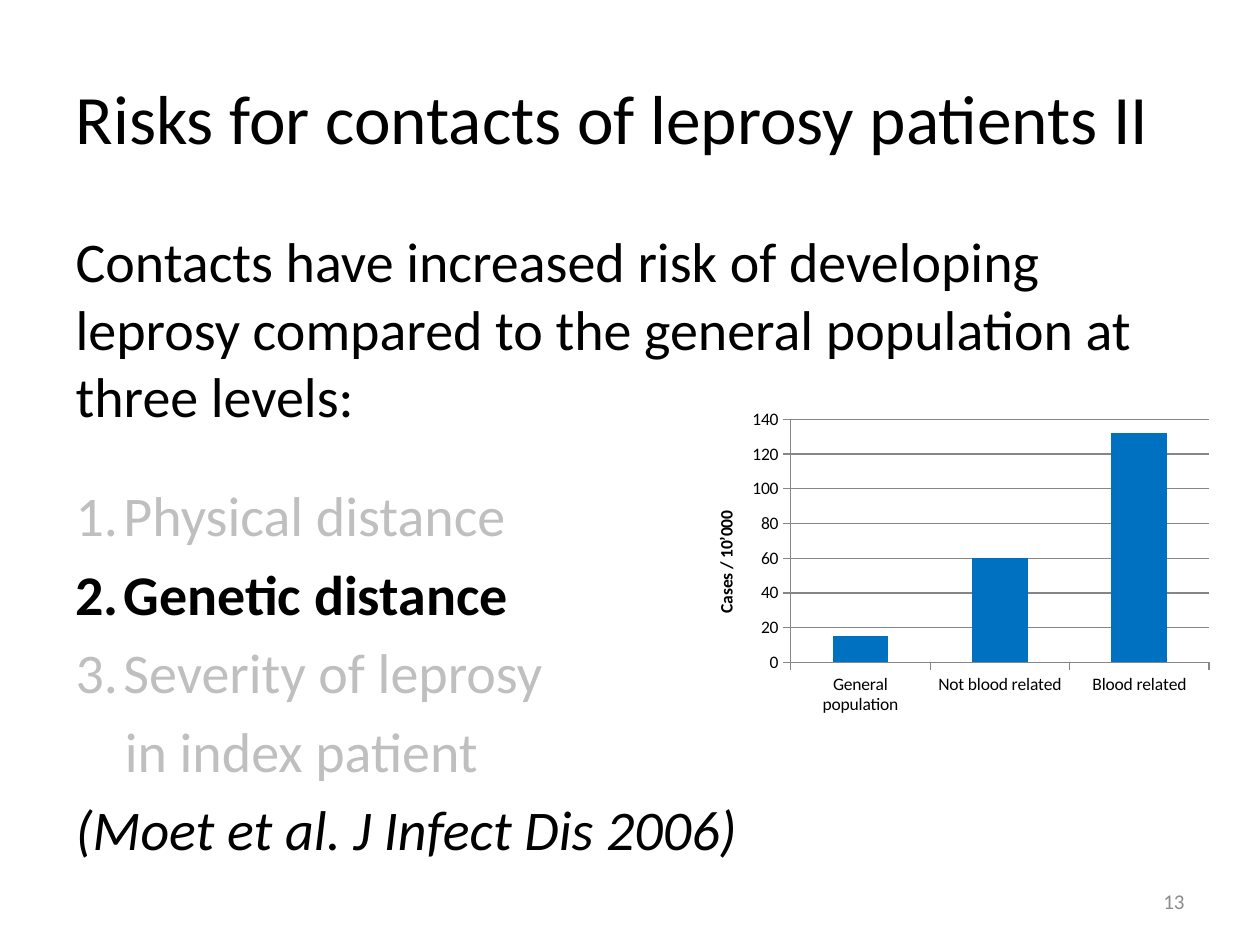
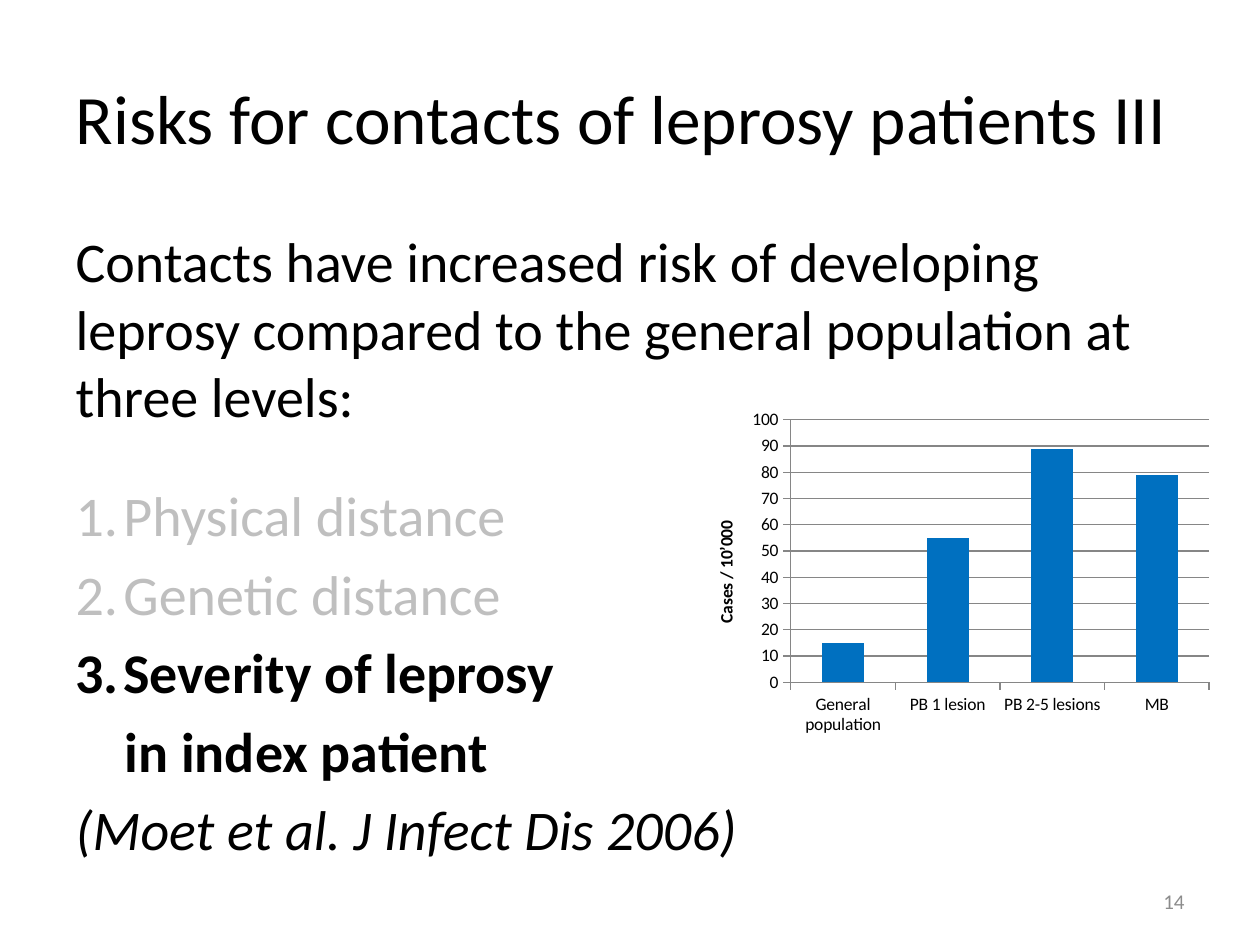
from lxml.etree import SubElement
from pptx import Presentation
from pptx.chart.data import CategoryChartData
from pptx.dml.color import RGBColor
from pptx.enum.chart import XL_CHART_TYPE, XL_TICK_MARK
from pptx.enum.text import MSO_ANCHOR, MSO_AUTO_SIZE, PP_ALIGN
from pptx.oxml.ns import qn
from pptx.util import Inches, Pt

FONT = "Calibri"
BLACK, MUTED, FOOTER, BAR, GRID = "000000", "BFBFBF", "8C8C8C", "0070C0", "868686"
BODY_SIZE, SPACE, LIST_GAP = 32, 6.4, 23.5
HANG, CONTINUED = 0.38, 0.39

INTRO = ("Contacts have increased risk of developing leprosy compared to "
         "the general population at three levels:")
LEVELS = [["Physical distance"], ["Genetic distance"],
          ["Severity of leprosy", "in index patient"]]
CITATION = "(Moet et al. J Infect Dis 2006)"
AXIS_TITLE = "Cases / 10’000"

SLIDES = [
    {"title": "Risks for contacts of leprosy patients II", "number": 13,
     "level": 1, "chart_height": 2.52,
     "cases": {"General population": 15, "Not blood related": 60,
               "Blood related": 132}},
    {"title": "Risks for contacts of leprosy patients III", "number": 14,
     "level": 2, "chart_height": 2.68,
     "cases": {"General population": 15, "PB 1 lesion": 55,
               "PB 2-5 lesions": 89, "MB": 79}},
]


def rgb(color):
    return RGBColor.from_string(color)


def set_font(font, size, color=BLACK, bold=False, italic=False):
    font.name, font.size = FONT, Pt(size)
    font.bold, font.italic = bold, italic
    font.color.rgb = rgb(color)


def place(shape, left, top, width, height):
    shape.left, shape.top = Inches(left), Inches(top)
    shape.width, shape.height = Inches(width), Inches(height)


def write(tf, text, size=BODY_SIZE, align=PP_ALIGN.LEFT, before=0,
          left=0, indent=0, numbered=False, **style):
    p = tf.paragraphs[0]
    if p.runs:
        p = tf.add_paragraph()
    p.alignment, p.space_before = align, Pt(before)
    r = p.add_run()
    r.text = text
    set_font(r.font, size, **style)
    pPr = p._p.get_or_add_pPr()
    pPr.set("marL", str(Inches(left)))
    pPr.set("indent", str(Inches(indent)))
    if numbered:
        SubElement(pPr, qn("a:buFont"), typeface="+mj-lt")
        SubElement(pPr, qn("a:buAutoNum"), type="arabicPeriod")
    else:
        SubElement(pPr, qn("a:buNone"))


def add_title(s, text):
    title = s.shapes.title
    place(title, 0.5, 0.3, 9, 1.25)
    tf = title.text_frame
    tf.auto_size, tf.vertical_anchor = MSO_AUTO_SIZE.NONE, MSO_ANCHOR.MIDDLE
    write(tf, text, size=39.6)


def add_levels(s, current):
    body = s.placeholders[1]
    place(body, 0.5, 1.75, 9, 4.95)
    tf = body.text_frame
    tf.auto_size = MSO_AUTO_SIZE.NONE
    write(tf, INTRO, before=SPACE)
    for i, (name, *more) in enumerate(LEVELS):
        style = {"color": BLACK if i == current else MUTED, "bold": i == current}
        write(tf, name, before=SPACE if i else LIST_GAP + SPACE,
              left=HANG, indent=-HANG, numbered=True, **style)
        for line in more:
            write(tf, line, before=SPACE, indent=CONTINUED, **style)
    write(tf, CITATION, before=SPACE, italic=True)


def add_number(s, number):
    box = s.shapes.add_textbox(Inches(7.17), Inches(6.95), Inches(2.33), Inches(0.4))
    tf = box.text_frame
    tf.word_wrap, tf.vertical_anchor = True, MSO_ANCHOR.MIDDLE
    write(tf, str(number), size=12, align=PP_ALIGN.RIGHT, color=FOOTER)


def add_cases_chart(s, cases, height):
    data = CategoryChartData()
    data.categories = list(cases)
    data.add_series("Series 1", list(cases.values()))
    chart = s.shapes.add_chart(XL_CHART_TYPE.COLUMN_CLUSTERED, Inches(5.47),
                               Inches(3.2), Inches(4.21), Inches(height), data).chart
    set_font(chart.font, 10)
    chart.has_legend = chart.has_title = False
    plot = chart.plots[0]
    plot.gap_width, plot.vary_by_categories = 150, False
    fill = plot.series[0].format.fill
    fill.solid()
    fill.fore_color.rgb = rgb(BAR)
    value_axis = chart.value_axis
    value_axis.has_major_gridlines = True
    for axis in (chart.category_axis, value_axis):
        axis.major_tick_mark = XL_TICK_MARK.OUTSIDE
        axis.format.line.color.rgb = rgb(GRID)
    value_axis.major_gridlines.format.line.color.rgb = rgb(GRID)
    tf = value_axis.axis_title.text_frame
    tf.text = AXIS_TITLE
    set_font(tf.paragraphs[0].runs[0].font, 10, bold=True)


def main():
    prs = Presentation()
    prs.slide_width, prs.slide_height = Inches(10), Inches(7.5)
    for content in SLIDES:
        s = prs.slides.add_slide(prs.slide_layouts[1])
        add_title(s, content["title"])
        add_levels(s, content["level"])
        add_number(s, content["number"])
        add_cases_chart(s, content["cases"], content["chart_height"])
    prs.save("out.pptx")


if __name__ == "__main__":
    main()
